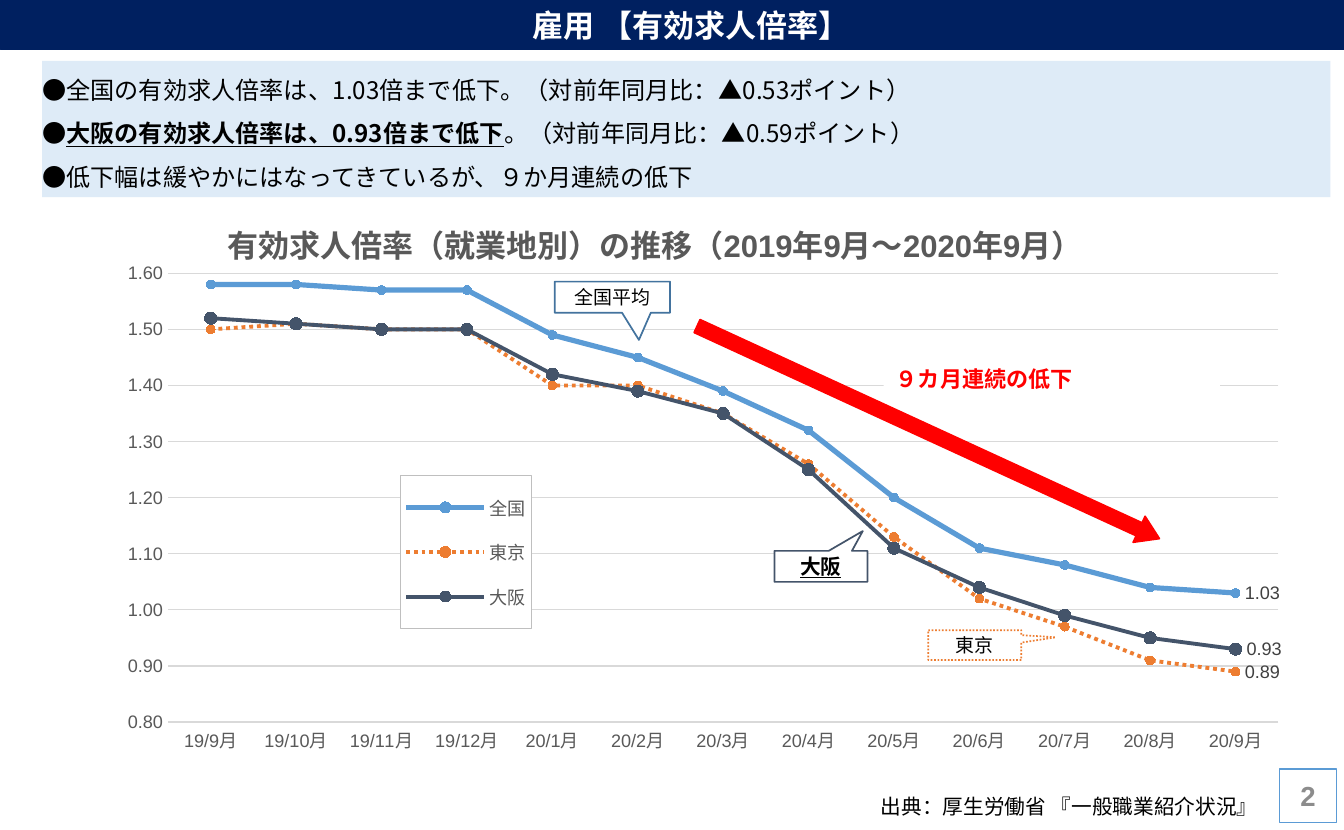
from dataclasses import dataclass
from typing import Optional

from lxml import etree
from pptx import Presentation
from pptx.chart.data import CategoryChartData
from pptx.dml.color import RGBColor
from pptx.enum import chart as charts, dml, shapes, text
from pptx.oxml import parse_xml
from pptx.oxml.ns import nsdecls, qn
from pptx.util import Inches, Pt

COLORS = {
    "navy": "002060", "pale": "DEEBF7", "white": "FFFFFF", "black": "000000",
    "blue": "5B9BD5", "orange": "ED7D31", "slate": "44546A", "steel": "43739E",
    "red": "FF0000", "gray": "595959", "grid": "D9D9D9", "frame": "BFBFBF",
    "label": "404040", "number": "8C8C8C",
}
CJK_FONT = "Noto Sans CJK JP"
MONTHS = [f"19/{m}月" for m in range(9, 13)] + [f"20/{m}月" for m in range(1, 10)]
RECT = shapes.MSO_SHAPE.RECTANGLE
CALLOUT = shapes.MSO_SHAPE.RECTANGULAR_CALLOUT
ARROW = shapes.MSO_SHAPE.RIGHT_ARROW
LEFT, CENTER = text.PP_ALIGN.LEFT, text.PP_ALIGN.CENTER
DOTTED = dml.MSO_LINE.ROUND_DOT


@dataclass
class Box:
    at: tuple[float, float, float, float]
    content: str = ""
    size: float = 11
    color: str = "black"
    bold: bool = False
    underline: bool = False
    align: text.PP_ALIGN = CENTER
    kind: shapes.MSO_SHAPE = RECT
    adjustments: tuple[float, ...] = ()
    fill: str = "white"
    line: Optional[str] = None
    dotted: bool = False
    rotation: float = 0


@dataclass
class Region:
    name: str
    values: list[float]
    color: str
    width: float
    marker: int
    dotted: bool = False


BOXES = [
    Box((10.31, 6.2, 0.46, 0.43), "2", 16, "number", bold=True, line="blue"),
    Box((7.12, 2.89, 2.71, 0.32), "９カ月連続の低下", 12.8, "red", bold=True, align=LEFT),
    Box((5.43, 3.37, 4.1, 0.23), kind=ARROW, adjustments=(0.5, 0.78),
        fill="red", line="red", rotation=24.7),
    Box((7.48, 5.08, 0.75, 0.24), "東京", kind=CALLOUT, adjustments=(0.87, -0.26),
        line="orange", dotted=True),
    Box((6.24, 4.44, 0.75, 0.25), "大阪", 12, bold=True, underline=True, kind=CALLOUT,
        adjustments=(0.45, -1.14), line="slate"),
    Box((4.47, 2.27, 0.93, 0.25), "全国平均", kind=CALLOUT, adjustments=(0.23, 1.38),
        line="steel"),
]
REGIONS = [
    Region("全国", [1.58, 1.58, 1.57, 1.57, 1.49, 1.45, 1.39, 1.32, 1.2, 1.11, 1.08, 1.04, 1.03],
           "blue", 3, 5),
    Region("東京", [1.5, 1.51, 1.5, 1.5, 1.4, 1.4, 1.35, 1.26, 1.13, 1.02, 0.97, 0.91, 0.89],
           "orange", 2.25, 5, dotted=True),
    Region("大阪", [1.52, 1.51, 1.5, 1.5, 1.42, 1.39, 1.35, 1.25, 1.11, 1.04, 0.99, 0.95, 0.93],
           "slate", 2.25, 7),
]
SUMMARY = [
    [("●全国の有効求人倍率は、1.03倍まで低下。（対前年同月比：▲0.53ポイント）", False)],
    [("●", False), ("大阪の有効求人倍率は、0.93倍まで低下", True),
     ("。（対前年同月比：▲0.59ポイント）", False)],
    [("●低下幅は緩やかにはなってきているが、９か月連続の低下", False)],
]


def rgb(name: str) -> RGBColor:
    return RGBColor.from_string(COLORS[name])


def paint(fill, color: str) -> None:
    fill.solid()
    fill.fore_color.rgb = rgb(color)


def format_font(font, *, size: float, color: str, bold: bool = False, name: str = "Arial") -> None:
    font.size = Pt(size)
    font.bold = bold
    font.name = name
    paint(font.fill, color)


def add_run(paragraph, content: str, *, size: float, color: str = "black", bold: bool = False,
            underline: bool = False, font: str = "Arial") -> None:
    run = paragraph.add_run()
    run.text = content
    format_font(run.font, size=size, color=color, bold=bold, name=font)
    run.font.underline = underline
    etree.SubElement(run.font._element, qn("a:ea"), typeface=CJK_FONT)


def place(shape, at: tuple[float, float, float, float]) -> None:
    shape.left, shape.top, shape.width, shape.height = map(Inches, at)


def add_box(slide, box: Box):
    shape = slide.shapes.add_shape(box.kind, *map(Inches, box.at))
    shape.shadow.inherit = False
    shape.rotation = box.rotation
    for index, value in enumerate(box.adjustments):
        shape.adjustments[index] = value
    paint(shape.fill, box.fill)
    if box.line:
        paint(shape.line.fill, box.line)
        shape.line.width = Pt(1)
        if box.dotted:
            shape.line.dash_style = DOTTED
    else:
        shape.line.fill.background()
    if box.content:
        frame = shape.text_frame
        frame.vertical_anchor = text.MSO_ANCHOR.MIDDLE
        frame.margin_top = frame.margin_bottom = 0
        paragraph = frame.paragraphs[0]
        paragraph.alignment = box.align
        add_run(paragraph, box.content, size=box.size, color=box.color, bold=box.bold,
                underline=box.underline)
    return shape


def add_title(slide) -> None:
    title = slide.shapes.title
    place(title, (0, 0, 10.83, 0.4))
    paint(title.fill, "navy")
    paint(title.line.fill, "navy")
    title.line.width = Pt(0.5)
    frame = title.text_frame
    frame.auto_size = text.MSO_AUTO_SIZE.NONE
    frame.vertical_anchor = text.MSO_ANCHOR.MIDDLE
    frame.margin_left = Inches(0.16)
    frame.margin_top = frame.margin_bottom = 0
    frame.paragraphs[0].alignment = CENTER
    add_run(frame.paragraphs[0], "　雇用 【有効求人倍率】", size=18, color="white", bold=True)


def add_summary(slide) -> None:
    frame = add_box(slide, Box((0.34, 0.49, 10.38, 1.1), fill="pale")).text_frame
    frame.vertical_anchor = text.MSO_ANCHOR.TOP
    frame.margin_left = frame.margin_right = frame.margin_top = frame.margin_bottom = 0
    for index, runs in enumerate(SUMMARY):
        paragraph = frame.add_paragraph() if index else frame.paragraphs[0]
        paragraph.alignment = LEFT
        paragraph.line_spacing = Pt(25.2)
        properties = paragraph._p.get_or_add_pPr()
        properties.set("marL", str(Inches(0.29)))
        properties.set("indent", str(-Inches(0.29)))
        for content, strong in runs:
            add_run(paragraph, content, size=14, bold=strong, underline=strong, font=CJK_FONT)


def set_layout(element, position: int, **values: float) -> None:
    for old in element.findall(qn("c:layout")):
        element.remove(old)
    target = '<c:layoutTarget val="inner"/>' if position == 0 else ""
    modes = "".join(f'<c:{key}Mode val="edge"/>' for key in "xy")
    sizes = "".join(f'<c:{key} val="{value}"/>' for key, value in values.items())
    element.insert(position, parse_xml(
        f'<c:layout {nsdecls("c")}><c:manualLayout>{target}{modes}{sizes}'
        "</c:manualLayout></c:layout>"))


def format_axes(chart) -> None:
    for axis in (chart.category_axis, chart.value_axis):
        axis.major_tick_mark = axis.minor_tick_mark = charts.XL_TICK_MARK.NONE
        format_font(axis.tick_labels.font, size=10.5, color="gray")
    values = chart.value_axis
    values.minimum_scale, values.maximum_scale, values.major_unit = 0.8, 1.6, 0.1
    values.tick_labels.number_format = "0.00"
    values.tick_labels.number_format_is_linked = False
    values.format.line.fill.background()
    for line in (chart.category_axis.format.line, values.major_gridlines.format.line):
        paint(line.fill, "grid")
        line.width = Pt(0.75)


def format_series(series, region: Region) -> None:
    series.smooth = False
    line = series.format.line
    paint(line.fill, region.color)
    line.width = Pt(region.width)
    if region.dotted:
        line.dash_style = DOTTED
    series.marker.style = charts.XL_MARKER_STYLE.CIRCLE
    series.marker.size = region.marker
    paint(series.marker.format.fill, region.color)
    paint(series.marker.format.line.fill, region.color)
    series.data_labels.show_value = False
    series.data_labels.number_format = "0.00"
    series.data_labels.number_format_is_linked = False
    label = series.points[len(MONTHS) - 1].data_label
    label.position = charts.XL_LABEL_POSITION.RIGHT
    format_font(label.font, size=10.5, color="label")


def add_ratio_chart(slide) -> None:
    data = CategoryChartData(number_format="0.00")
    data.categories = MONTHS
    for region in REGIONS:
        data.add_series(region.name, region.values)
    at = map(Inches, (0.73, 1.47, 9.6, 4.73))
    chart = slide.shapes.add_chart(charts.XL_CHART_TYPE.LINE_MARKERS, *at, data).chart
    format_font(chart.font, size=10, color="black")
    chart.has_title = True
    add_run(chart.chart_title.text_frame.paragraphs[0],
            "有効求人倍率（就業地別）の推移（2019年9月〜2020年9月）",
            size=18, color="gray", bold=True)
    set_layout(chart.chart_title._element, 1, x=0.11, y=0.05)
    chart.plots[0].vary_by_categories = False
    set_layout(chart._chartSpace.xpath("c:chart/c:plotArea")[0], 0,
               x=0.065, y=0.155, w=0.932, h=0.765)
    format_axes(chart)
    for series, region in zip(chart.plots[0].series, REGIONS):
        format_series(series, region)
    chart.has_legend = True
    legend = chart.legend
    legend.position = charts.XL_LEGEND_POSITION.RIGHT
    legend.include_in_layout = True
    format_font(legend.font, size=10.5, color="gray")
    set_layout(legend._element, 1, x=0.26, y=0.5, w=0.11, h=0.26)
    solid = '<a:solidFill><a:srgbClr val="{}"/></a:solidFill>'
    legend._element.find(qn("c:txPr")).addprevious(parse_xml(
        f'<c:spPr {nsdecls("c", "a")}>{solid.format(COLORS["white"])}'
        f'<a:ln w="9525">{solid.format(COLORS["frame"])}</a:ln></c:spPr>'))


def add_source(slide) -> None:
    frame = slide.shapes.add_textbox(*map(Inches, (7, 6.35, 3.33, 0.31))).text_frame
    frame.word_wrap = True
    add_run(frame.paragraphs[0], "出典：厚生労働省 『一般職業紹介状況』", size=12)


def main() -> None:
    presentation = Presentation()
    presentation.slide_width, presentation.slide_height = Inches(10.83), Inches(6.69)
    slide = presentation.slides.add_slide(presentation.slide_layouts[5])
    add_title(slide)
    add_summary(slide)
    add_source(slide)
    add_ratio_chart(slide)
    for box in BOXES:
        add_box(slide, box)
    presentation.save("out.pptx")


if __name__ == "__main__":
    main()
